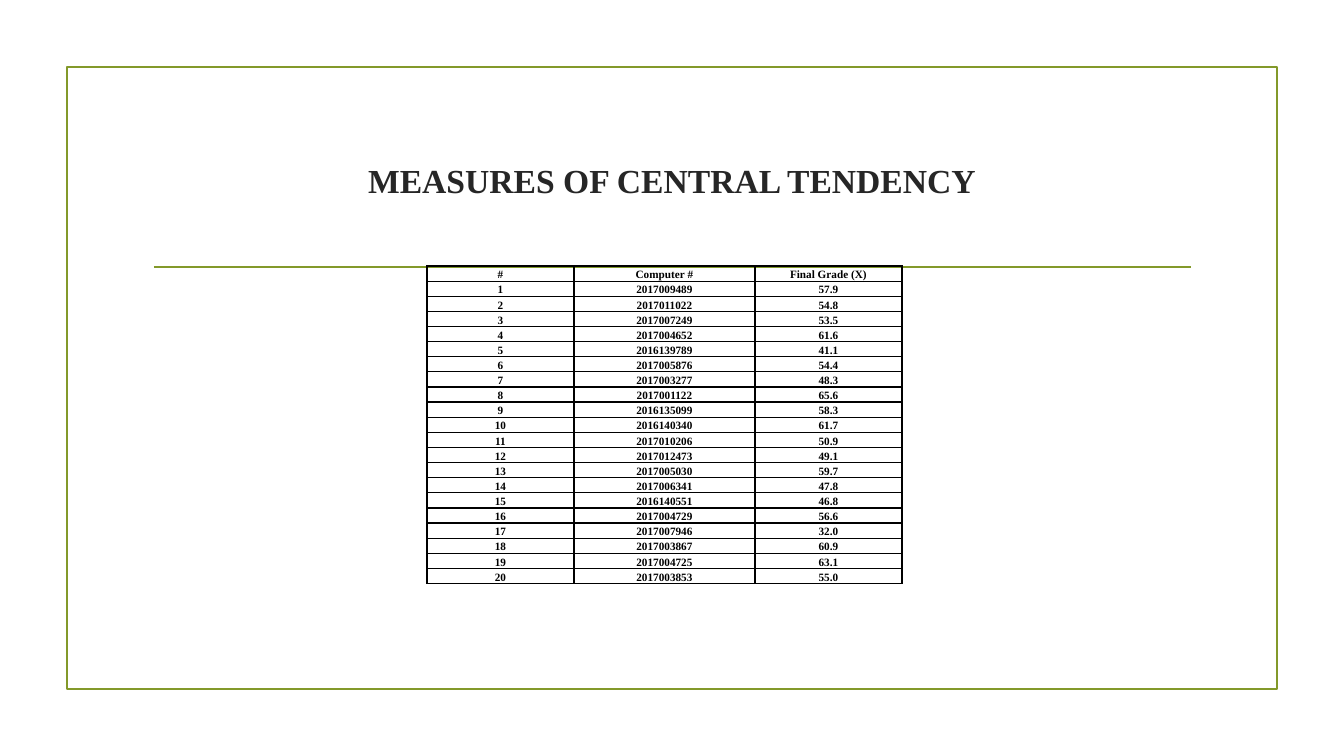
from lxml import etree
from pptx import Presentation
from pptx.dml.color import RGBColor
from pptx.enum.shapes import MSO_CONNECTOR, MSO_SHAPE
from pptx.enum.text import MSO_ANCHOR, PP_ALIGN
from pptx.oxml.ns import qn
from pptx.util import Pt

RECTANGLE = MSO_SHAPE.RECTANGLE
STRAIGHT = MSO_CONNECTOR.STRAIGHT
CENTER = PP_ALIGN.CENTER
MIDDLE = MSO_ANCHOR.MIDDLE
BOTTOM = MSO_ANCHOR.BOTTOM

EMU_PER_PX = 914400 / 100.8
FONT = "Times New Roman"
COLORS = {"accent": "83992A", "title": "262626", "table": "000000"}

HEADINGS = ("#", "Computer #", "Final Grade (X)")
GRADES = (
    ("2017009489", "57.9"),
    ("2017011022", "54.8"),
    ("2017007249", "53.5"),
    ("2017004652", "61.6"),
    ("2016139789", "41.1"),
    ("2017005876", "54.4"),
    ("2017003277", "48.3"),
    ("2017001122", "65.6"),
    ("2016135099", "58.3"),
    ("2016140340", "61.7"),
    ("2017010206", "50.9"),
    ("2017012473", "49.1"),
    ("2017005030", "59.7"),
    ("2017006341", "47.8"),
    ("2016140551", "46.8"),
    ("2017004729", "56.6"),
    ("2017007946", "32.0"),
    ("2017003867", "60.9"),
    ("2017004725", "63.1"),
    ("2017003853", "55.0"),
)
COLUMN_WIDTHS = (147, 181, 147)


def px(length):
    return round(length * EMU_PER_PX)


def color(name):
    return RGBColor.from_string(COLORS[name])


def write_text(text_frame, text, size, color_name, bold=True, align=CENTER):
    paragraph = text_frame.paragraphs[0]
    paragraph.alignment = align
    run = paragraph.add_run()
    run.text = text
    run.font.name = FONT
    run.font.size = Pt(size)
    run.font.bold = bold
    run.font.color.rgb = color(color_name)


def style_line(line):
    line.color.rgb = color("accent")
    line.width = Pt(1.25)


def add_frame(slide, left, top, width, height):
    shape = slide.shapes.add_shape(RECTANGLE, px(left), px(top), px(width), px(height))
    shape.shadow.inherit = False
    shape.fill.background()
    style_line(shape.line)


def add_rule(slide, left, right, y):
    connector = slide.shapes.add_connector(STRAIGHT, px(left), px(y), px(right), px(y))
    style_line(connector.line)
    etree.SubElement(connector._element.spPr, qn("a:effectLst"))


def set_title(slide, text, left, top, width, height):
    title = slide.shapes.title
    title.left, title.top = px(left), px(top)
    title.width, title.height = px(width), px(height)
    title.text_frame.word_wrap = True
    title.text_frame.vertical_anchor = MIDDLE
    write_text(title.text_frame, text, 24, "title")


def add_borders(cell):
    properties = cell._tc.get_or_add_tcPr()
    for position, side in enumerate(("lnL", "lnR", "lnT", "lnB")):
        border = etree.Element(qn(f"a:{side}"), w=str(Pt(1)))
        fill = etree.SubElement(border, qn("a:solidFill"))
        etree.SubElement(fill, qn("a:srgbClr"), val=COLORS["table"])
        properties.insert(position, border)


def fill_cell(cell, text):
    cell.fill.background()
    cell.vertical_anchor = BOTTOM
    cell.margin_left = cell.margin_right = cell.margin_top = px(1)
    cell.margin_bottom = 0
    write_text(cell.text_frame, text, 8, "table")
    add_borders(cell)


def add_grade_table(slide, left, top, height):
    rows = [HEADINGS]
    rows += [(str(number), *grade) for number, grade in enumerate(GRADES, 1)]
    table = slide.shapes.add_table(
        len(rows), len(HEADINGS), px(left), px(top), px(sum(COLUMN_WIDTHS)), px(height)
    ).table
    table.first_row = False
    table.horz_banding = False
    for column, width in zip(table.columns, COLUMN_WIDTHS):
        column.width = px(width)
    for row, texts in zip(table.rows, rows):
        for cell, text in zip(row.cells, texts):
            fill_cell(cell, text)


def main():
    presentation = Presentation()
    presentation.slide_width = px(1344)
    presentation.slide_height = px(756)
    slide = presentation.slides.add_slide(presentation.slide_layouts[5])
    add_frame(slide, 67, 67, 1210, 622)
    add_rule(slide, 154, 1191, 267)
    set_title(slide, "MEASURES OF CENTRAL TENDENCY", 143, 108, 1058, 144)
    add_grade_table(slide, 427, 266, 318)
    presentation.save("out.pptx")


if __name__ == "__main__":
    main()
